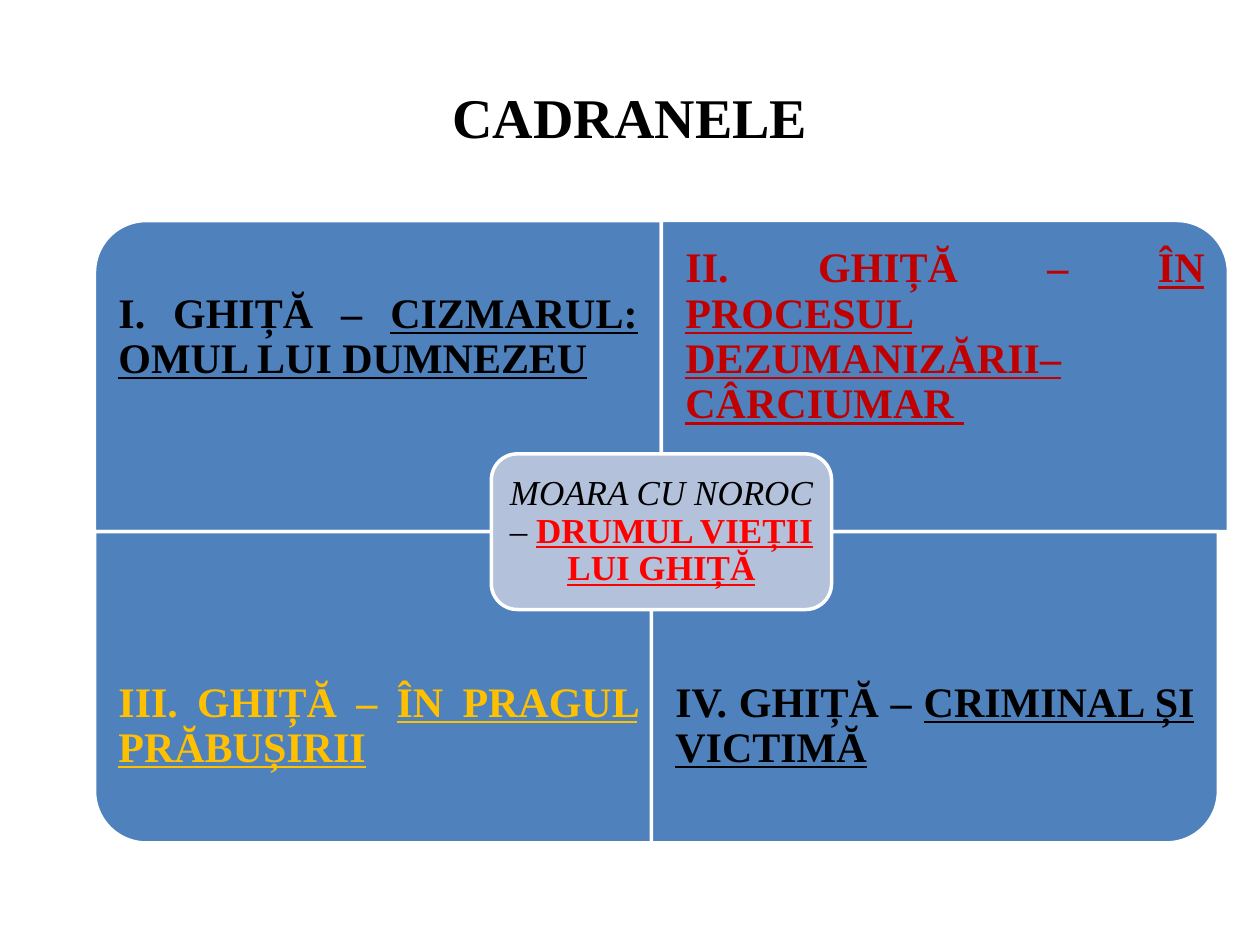
from pptx import Presentation
from pptx.dml.color import RGBColor
from pptx.enum.shapes import MSO_SHAPE
from pptx.enum.text import MSO_ANCHOR, PP_ALIGN
from pptx.util import Inches, Pt

FONT = "Times New Roman"
CELL_W, CELL_H = 4.5, 2.47
TEXT_SHARE = 0.75
GRID_LEFT, GRID_TOP = 0.75, 1.75
QUADRANTS = [
    (0, 0, 0, 270, "000000", "I. GHIȚĂ – ", "CIZMARUL: OMUL LUI DUMNEZEU"),
    (1, 0, 0, 0, "C00000", "II. GHIȚĂ – ", "ÎN PROCESUL DEZUMANIZĂRII– CÂRCIUMAR "),
    (0, 1, 0, 180, "FFC000", "III. GHIȚĂ – ", "ÎN PRAGUL PRĂBUȘIRII"),
    (1, 1, -0.08, 90, "000000", "IV. GHIȚĂ – ", "CRIMINAL ȘI VICTIMĂ"),
]


def rgb(value):
    return RGBColor.from_string(value)


def add_panel(s, kind, box, fill, rotation=0):
    x, y, w, h = box
    if rotation % 180:
        x, y, w, h = x + (w - h) / 2, y + (h - w) / 2, h, w
    sp = s.shapes.add_shape(kind, Inches(x), Inches(y), Inches(w), Inches(h))
    sp.rotation = rotation
    sp.shadow.inherit = False
    sp.fill.solid()
    sp.fill.fore_color.rgb = rgb(fill)
    sp.line.color.rgb = rgb("FFFFFF")
    sp.line.width = Pt(2)


def add_text(s, box, size, align, inset, color="000000", bold=None, spacing=None):
    tf = s.shapes.add_textbox(*map(Inches, box)).text_frame
    tf.word_wrap = True
    tf.vertical_anchor = MSO_ANCHOR.MIDDLE
    tf.margin_left = tf.margin_right = Inches(inset)
    tf.margin_top = tf.margin_bottom = Inches(inset)
    p = tf.paragraphs[0]
    p.alignment = align
    p.line_spacing = spacing
    p.font.name = FONT
    p.font.size = Pt(size)
    p.font.bold = bold
    p.font.color.rgb = rgb(color)
    return p


def add_run(p, text, underline=None):
    r = p.add_run()
    r.text = text
    r.font.underline = underline
    return r


def add_title(s, box):
    add_run(add_text(s, box, 32, PP_ALIGN.CENTER, 0.1, bold=True), "CADRANELE")


def add_quadrant(s, box, row, rotation, color, label, phrase):
    x, y, w, h = box
    add_panel(s, MSO_SHAPE.ROUND_1_RECTANGLE, box, "4F81BD", rotation)
    text_box = (x, y + row * h * (1 - TEXT_SHARE), w, h * TEXT_SHARE)
    p = add_text(s, text_box, 24, PP_ALIGN.JUSTIFY, 0.19, color, True, 0.9)
    add_run(p, label)
    add_run(p, phrase, True)


def add_center(s, box):
    x, y, w, h = box
    pad = 0.06
    add_panel(s, MSO_SHAPE.ROUNDED_RECTANGLE, box, "B3C1DB")
    text_box = (x + pad, y + pad, w - 2 * pad, h - 2 * pad)
    p = add_text(s, text_box, 20, PP_ALIGN.CENTER, 0.08, spacing=0.9)
    add_run(p, "MOARA CU NOROC ").font.italic = True
    add_run(p, "– ")
    r = add_run(p, "DRUMUL VIEȚII LUI GHIȚĂ", True)
    r.font.bold = True
    r.font.color.rgb = rgb("FF0000")


def main():
    prs = Presentation()
    prs.slide_width, prs.slide_height = Inches(10), Inches(7.5)
    s = prs.slides.add_slide(prs.slide_layouts[6])
    add_title(s, (0.5, 0.3, 9, 1.25))
    for col, row, shift, *content in QUADRANTS:
        box = (GRID_LEFT + col * CELL_W + shift, GRID_TOP + row * CELL_H, CELL_W, CELL_H)
        add_quadrant(s, box, row, *content)
    w, h = 0.6 * CELL_W, 0.5 * CELL_H
    add_center(s, (GRID_LEFT + CELL_W - w / 2, GRID_TOP + CELL_H - h / 2, w, h))
    prs.save("out.pptx")


if __name__ == "__main__":
    main()
